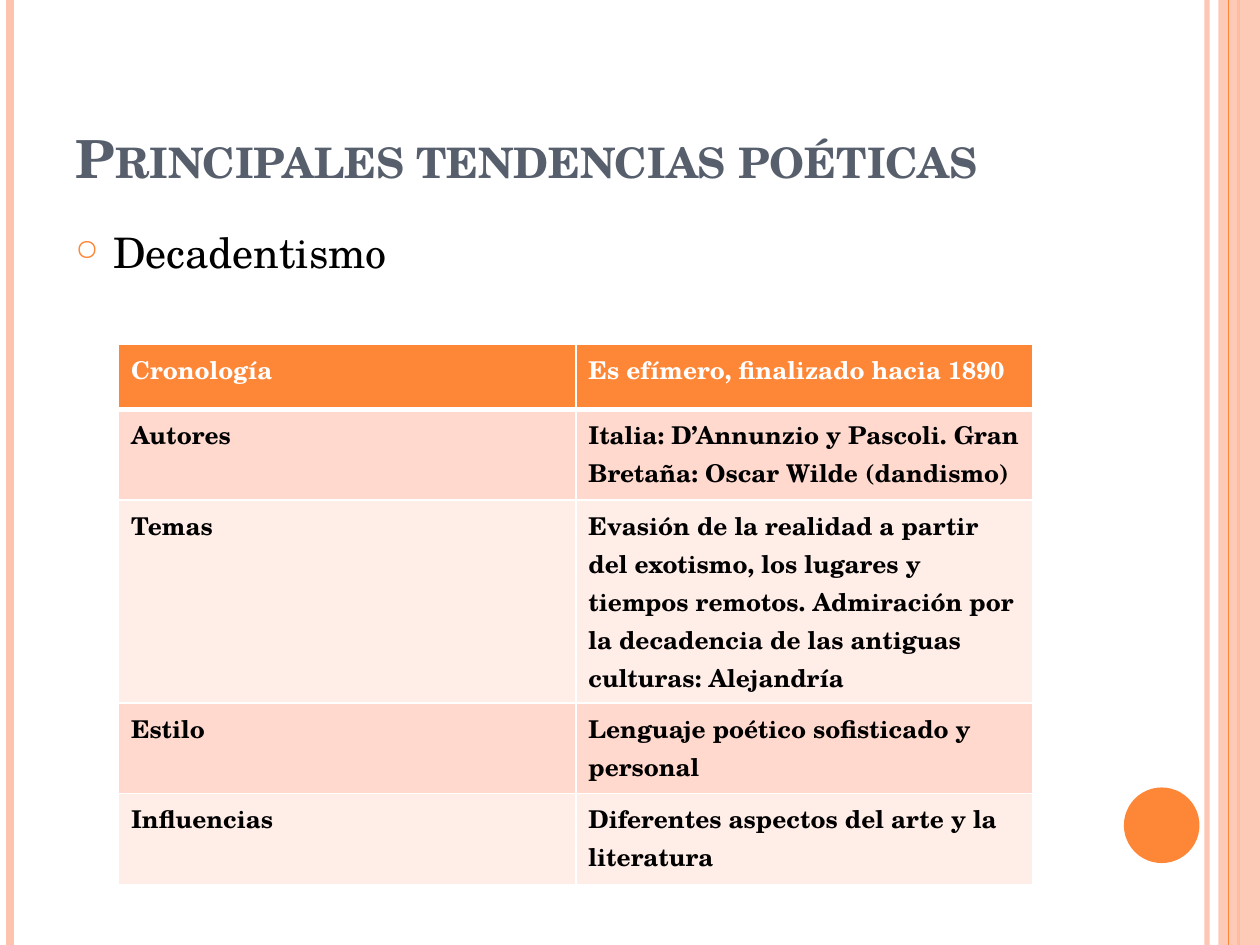
from dataclasses import dataclass

from lxml.etree import SubElement
from pptx import Presentation
from pptx.dml.color import RGBColor
from pptx.enum.shapes import MSO_CONNECTOR as Conn, MSO_SHAPE as Shape
from pptx.enum.text import MSO_ANCHOR as Anchor
from pptx.oxml import parse_xml
from pptx.oxml.ns import nsdecls, qn
from pptx.util import Emu, Inches, Pt

FONT = "TeX Gyre Schola"
ORANGE, PEACH, WHITE, BLACK, SLATE = "FE8637", "FEC3AE", "FFFFFF", "000000", "575F6D"
BANDS = ("FFD9CE", "FFEDE8")
COLUMNS, ROWS = 100, 75


@dataclass(frozen=True)
class Stripe:
    """A full-height vertical line at a grid column."""
    column: float
    color: str
    width: float
    opacity: int = 100


@dataclass(frozen=True)
class Box:
    """An area in grid columns and rows."""
    left: float
    top: float
    width: float
    height: float


@dataclass(frozen=True)
class Trait:
    """A table row: heading, description and height in grid rows."""
    name: str
    text: str
    height: float


BACK_STRIPES = (
    Stripe(95.8, PEACH, 3, 93),
    Stripe(0.8, PEACH, 4.5),
    Stripe(98.3, ORANGE, 1.5),
)
FRONT_STRIPE = Stripe(97.5, ORANGE, 0.75)
TRAITS = (
    Trait("Cronología", "Es efímero, finalizado hacia 1890", 5.2),
    Trait("Autores", "Italia: D’Annunzio y Pascoli. Gran Bretaña: "
          "Oscar Wilde (dandismo)", 7.2),
    Trait("Temas", "Evasión de la realidad a partir del exotismo, los lugares y "
          "tiempos remotos. Admiración por la decadencia de las antiguas "
          "culturas: Alejandría", 16.1),
    Trait("Estilo", "Lenguaje poético sofisticado y personal", 7.2),
    Trait("Influencias", "Diferentes aspectos del arte y la literatura", 7.2),
)

prs = Presentation()
prs.slide_width, prs.slide_height = Inches(10), Inches(7.5)
s = prs.slides.add_slide(prs.slide_layouts[6])


def rgb(color: str) -> RGBColor:
    """Turn a hex string into a colour."""
    return RGBColor.from_string(color)


def across(columns: float) -> Emu:
    """Convert grid columns to a length."""
    return Emu(round(prs.slide_width * columns / COLUMNS))


def down(rows: float) -> Emu:
    """Convert grid rows to a length."""
    return Emu(round(prs.slide_height * rows / ROWS))


def place(box: Box) -> tuple:
    """Give left, top, width and height of a grid area."""
    return across(box.left), down(box.top), across(box.width), down(box.height)


def set_opacity(sp_pr, percent: int) -> None:
    """Make the first colour of a shape partly transparent."""
    if percent < 100:
        color = next(sp_pr.iter(qn("a:srgbClr")))
        SubElement(color, qn("a:alpha"), val=str(percent * 1000))


def draw_stripe(stripe: Stripe) -> None:
    """Draw a vertical line from top to bottom of the slide."""
    x = across(stripe.column)
    line = s.shapes.add_connector(Conn.STRAIGHT, x, 0, x, down(ROWS))
    line.line.color.rgb = rgb(stripe.color)
    line.line.width = Pt(stripe.width)
    sp_pr = line._element.spPr
    set_opacity(sp_pr, stripe.opacity)
    SubElement(sp_pr, qn("a:effectLst"))


def draw_shape(kind: Shape, box: Box, color: str, opacity: int = 100) -> None:
    """Draw a filled shape without outline."""
    sp = s.shapes.add_shape(kind, *place(box))
    sp.shadow.inherit = False
    sp.fill.solid()
    sp.fill.fore_color.rgb = rgb(color)
    sp.line.fill.background()
    set_opacity(sp._element.spPr, opacity)


def add_run(p, text: str, size: float, color: str, bold: bool = False):
    """Append a formatted run to a paragraph."""
    r = p.add_run()
    r.text = text
    r.font.name, r.font.size, r.font.bold = FONT, Pt(size), bold
    r.font.color.rgb = rgb(color)
    return r


def add_text(box: Box, anchor: Anchor):
    """Add a wrapping text box and return its first paragraph."""
    tf = s.shapes.add_textbox(*place(box)).text_frame
    tf.word_wrap = True
    tf.vertical_anchor = anchor
    return tf.paragraphs[0]


def add_bullet(p, char: str, color: str, percent: int, indent: Emu) -> None:
    """Give a paragraph a hanging bullet."""
    p_pr = p._p.get_or_add_pPr()
    p_pr.set("marL", str(indent))
    p_pr.set("indent", str(-indent))
    bullet_color = SubElement(p_pr, qn("a:buClr"))
    SubElement(bullet_color, qn("a:srgbClr"), val=color)
    SubElement(p_pr, qn("a:buSzPct"), val=str(percent * 1000))
    SubElement(p_pr, qn("a:buChar"), char=char)


def set_borders(cell, top: float, bottom: float) -> None:
    """Draw white borders around a cell."""
    tc_pr = cell._tc.get_or_add_tcPr()
    widths = {"lnL": 1, "lnR": 1, "lnT": top, "lnB": bottom}
    for i, (tag, width) in enumerate(widths.items()):
        tc_pr.insert(i, parse_xml(
            f'<a:{tag} {nsdecls("a")} w="{Pt(width)}"><a:solidFill>'
            f'<a:srgbClr val="{WHITE}"/></a:solidFill></a:{tag}>'))


def draw_table(box: Box, traits: tuple[Trait, ...]) -> None:
    """Draw the traits as a table with a header row and banded rows."""
    table = s.shapes.add_table(len(traits), 2, *place(box)).table
    for column in table.columns:
        column.width = across(box.width / 2)
    for i, trait in enumerate(traits):
        table.rows[i].height = down(trait.height)
        fill = BANDS[(i - 1) % 2] if i else ORANGE
        for j, text in enumerate((trait.name, trait.text)):
            cell = table.cell(i, j)
            cell.fill.solid()
            cell.fill.fore_color.rgb = rgb(fill)
            set_borders(cell, 3 if i == 1 else 1, 1 if i else 3)
            p = cell.text_frame.paragraphs[0]
            add_run(p, text, 14, BLACK if i else WHITE, True)


def main() -> None:
    """Build and save the slide."""
    for stripe in BACK_STRIPES:
        draw_stripe(stripe)
    draw_shape(Shape.RECTANGLE, Box(96.7, 0, 3.3, ROWS), PEACH, 87)
    draw_stripe(FRONT_STRIPE)
    draw_shape(Shape.OVAL, Box(89.2, 62.5, 6, 6), ORANGE)

    p = add_text(Box(5, 3, 81.7, 12.5), Anchor.BOTTOM)
    r = add_run(p, "Principales tendencias poéticas", 30, SLATE, True)
    r.font._element.set("cap", "small")

    p = add_text(Box(5, 17.5, 81.7, 53.3), Anchor.TOP)
    p.space_before = Pt(6)
    add_bullet(p, "○", ORANGE, 70, across(3))
    add_run(p, "Decadentismo", 24, BLACK)

    height = sum(trait.height for trait in TRAITS)
    draw_table(Box(9.4, 27.3, 72.6, height), TRAITS)
    prs.save("out.pptx")


if __name__ == "__main__":
    main()
